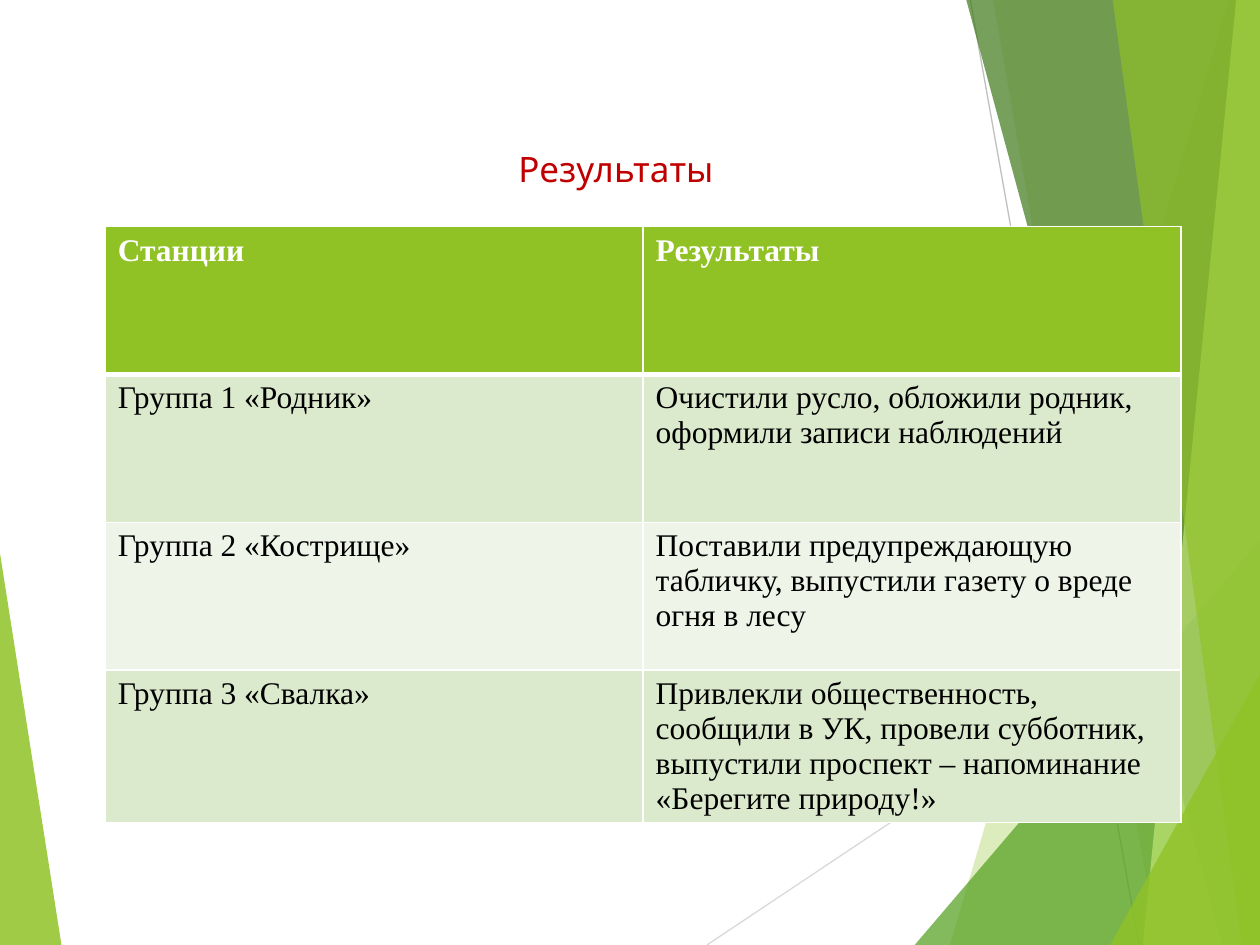
from lxml import etree
from pptx import Presentation
from pptx import util as u
from pptx.dml.color import RGBColor
from pptx.enum import shapes, text
from pptx.oxml import ns

WHITE = RGBColor(0xFF, 0xFF, 0xFF)
BLACK = RGBColor(0, 0, 0)
RED = RGBColor(0xC0, 0, 0)
LIME = RGBColor(0x90, 0xC2, 0x26)
GREEN = RGBColor(0x54, 0xA0, 0x21)
FOREST = RGBColor(0x3F, 0x78, 0x19)
PALE_LIME = RGBColor(0xC0, 0xE4, 0x74)
LIGHT_GRAY = RGBColor(0xD9, 0xD9, 0xD9)
GRAY = RGBColor(0xBF, 0xBF, 0xBF)
ROW_DARK = RGBColor(0xDB, 0xE9, 0xCD)
ROW_LIGHT = RGBColor(0xEE, 0xF4, 0xE8)

WIDTH, HEIGHT = 25.4, 19.05

ROWS = [
    ("Станции", "Результаты"),
    ("Группа 1 «Родник»",
     "Очистили русло, обложили родник, оформили записи наблюдений"),
    ("Группа 2 «Кострище»",
     "Поставили предупреждающую табличку, выпустили газету о вреде огня в лесу"),
    ("Группа 3 «Свалка»",
     "Привлекли общественность, сообщили в УК, провели субботник, "
     "выпустили проспект – напоминание «Берегите природу!»"),
]


def write_text(frame, content, *, font, size, color, bold=False,
               align=text.PP_ALIGN.LEFT):
    paragraph = frame.paragraphs[0]
    paragraph.alignment = align
    run = paragraph.add_run()
    run.text = content
    run.font.name = font
    run.font.size = u.Pt(size)
    run.font.bold = bold
    run.font.color.rgb = color


def add_child(parent, tag, **attributes):
    return etree.SubElement(parent, ns.qn(tag), **attributes)


class SlideBuilder:
    title_font = "Karla"
    table_font = "Times New Roman"

    def __init__(self, presentation):
        self.slide = presentation.slides.add_slide(presentation.slide_layouts[5])

    def facet(self, points, color, opacity):
        corners = [(u.Cm(x), u.Cm(y)) for x, y in points]
        builder = self.slide.shapes.build_freeform(*corners[0])
        builder.add_line_segments(corners[1:])
        shape = builder.convert_to_shape()
        shape.shadow.inherit = False
        shape.line.fill.background()
        shape.fill.solid()
        shape.fill.fore_color.rgb = color
        fill_color = next(shape.element.spPr.iter(ns.qn("a:srgbClr")))
        add_child(fill_color, "a:alpha", val=str(opacity * 1000))

    def band(self, top_x, bottom_x, color, opacity):
        points = [(top_x, 0), (bottom_x, HEIGHT), (WIDTH, HEIGHT), (WIDTH, 0)]
        self.facet(points, color, opacity)

    def corner(self, x, y, color, opacity, side=WIDTH):
        self.facet([(x, HEIGHT), (side, y), (side, HEIGHT)], color, opacity)

    def line(self, start, end, color):
        ends = [u.Cm(value) for value in (*start, *end)]
        connector = self.slide.shapes.add_connector(
            shapes.MSO_CONNECTOR.STRAIGHT, *ends)
        connector.line.color.rgb = color
        connector.line.width = u.Pt(0.75)
        add_child(connector.element.spPr, "a:effectLst")

    def title(self, content, left, top, width, height):
        shape = self.slide.shapes.title
        shape.left, shape.top = u.Cm(left), u.Cm(top)
        shape.width, shape.height = u.Cm(width), u.Cm(height)
        frame = shape.text_frame
        frame.word_wrap = True
        frame.auto_size = text.MSO_AUTO_SIZE.NONE
        frame.vertical_anchor = text.MSO_ANCHOR.BOTTOM
        write_text(frame, content, font=self.title_font, size=20, color=RED,
                   align=text.PP_ALIGN.CENTER)
        shape.element.getparent().append(shape.element)

    def borders(self, cell, top, bottom):
        properties = cell._tc.get_or_add_tcPr()
        widths = {"a:lnL": 1, "a:lnR": 1, "a:lnT": top, "a:lnB": bottom}
        for tag, points in widths.items():
            border = add_child(properties, tag, w=str(u.Pt(points)))
            fill = add_child(border, "a:solidFill")
            add_child(fill, "a:srgbClr", val=str(WHITE))

    def table(self, rows, left, top, width, row_height):
        table = self.slide.shapes.add_table(
            len(rows), len(rows[0]), u.Cm(left), u.Cm(top),
            u.Cm(width), u.Cm(row_height * len(rows))).table
        for row_index, row in enumerate(rows):
            header = row_index == 0
            fill = LIME if header else (ROW_LIGHT, ROW_DARK)[row_index % 2]
            for column_index, content in enumerate(row):
                cell = table.cell(row_index, column_index)
                self.borders(cell, top=3 if row_index == 1 else 1,
                             bottom=3 if header else 1)
                cell.fill.solid()
                cell.fill.fore_color.rgb = fill
                write_text(cell.text_frame, content, font=self.table_font,
                           size=18, color=WHITE if header else BLACK,
                           bold=header)


def main():
    presentation = Presentation()
    presentation.slide_width = u.Cm(WIDTH)
    presentation.slide_height = u.Cm(HEIGHT)
    builder = SlideBuilder(presentation)

    builder.corner(1.24, 11.15, LIME, 85, side=0)
    builder.line((14.25, HEIGHT), (WIDTH, 11.61), LIGHT_GRAY)
    builder.line((19.56, 0), (22.96, HEIGHT), GRAY)
    builder.band(24.77, 19.15, LIME, 30)
    builder.band(20.02, 23.34, LIME, 20)
    builder.corner(18.44, 10.9, GREEN, 72)
    builder.band(19.48, 24.64, FOREST, 70)
    builder.band(24.92, 23.04, PALE_LIME, 70)
    builder.band(22.43, 25.04, LIME, 65)
    builder.corner(22.38, 13.59, LIME, 80)

    builder.title("Результаты", 1.19, 1.4, 22.45, 2.54)
    builder.table(ROWS, 2.12, 4.57, 21.69, 2.98)

    presentation.save("out.pptx")


if __name__ == "__main__":
    main()
